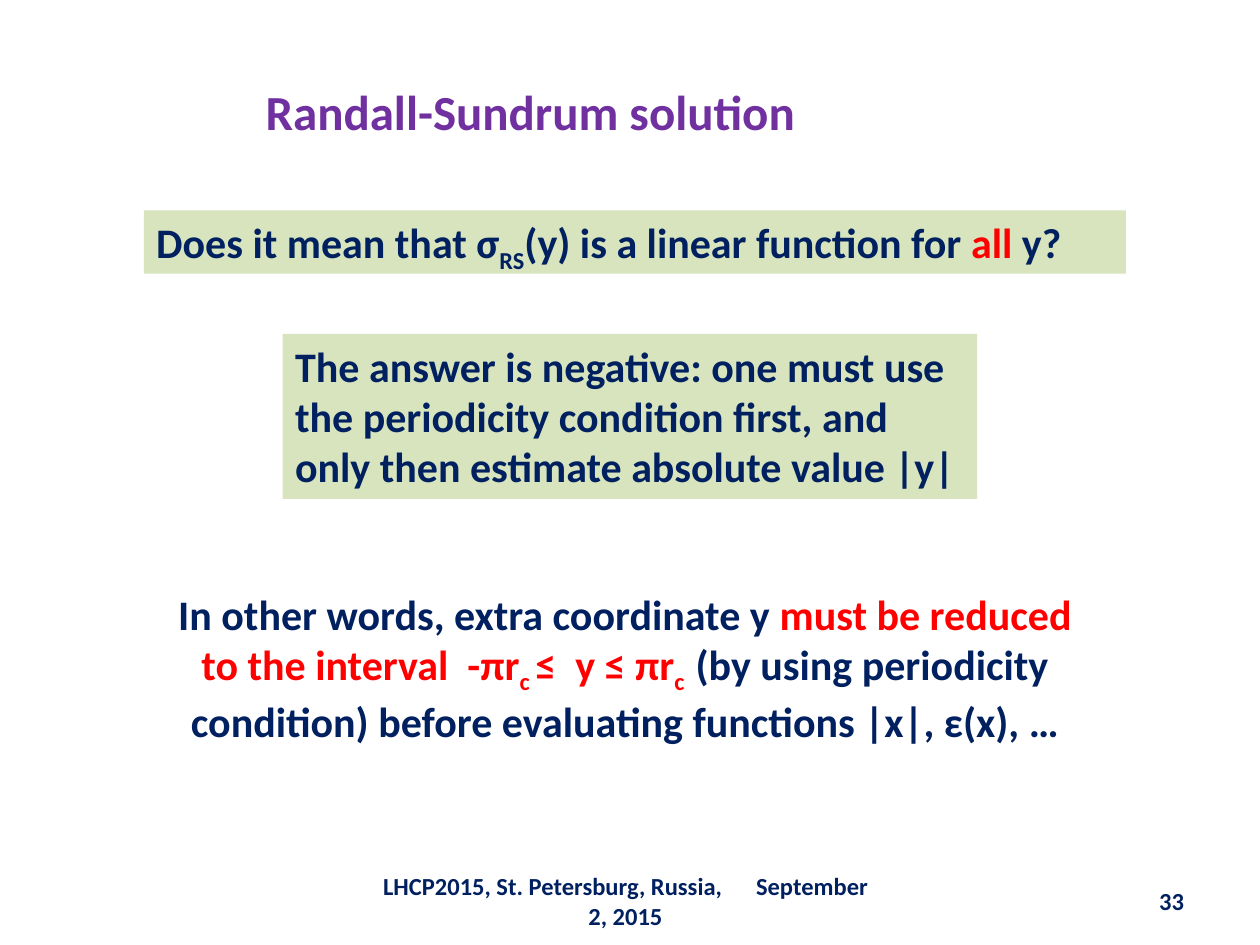
from pptx import Presentation
from pptx.dml.color import RGBColor
from pptx.enum.shapes import MSO_SHAPE
from pptx.enum.text import MSO_ANCHOR, MSO_AUTO_SIZE, PP_ALIGN
from pptx.util import Cm, Pt

RECT = MSO_SHAPE.RECTANGLE
LEFT, CENTER, RIGHT = PP_ALIGN.LEFT, PP_ALIGN.CENTER, PP_ALIGN.RIGHT
TOP, MIDDLE = MSO_ANCHOR.TOP, MSO_ANCHOR.MIDDLE
NO_FIT = MSO_AUTO_SIZE.NONE

NAVY, RED, PURPLE, GREEN = "002060", "FF0000", "7030A0", "D7E4BD"
SUB = {"baseline": "-25000"}
WIDE_SPACE = {"spc": "1600"}


def rgb(value):
    return RGBColor.from_string(value)


class SlideBuilder:
    font = {"name": "Calibri", "bold": True}

    def __init__(self, slide):
        self.s = slide

    def fill_text(self, sp, runs, size, align=LEFT, anchor=TOP, wrap=True):
        """Fill sp with runs given as (text, colour, extra run attributes)."""
        tf = sp.text_frame
        frame = {"word_wrap": wrap, "auto_size": NO_FIT, "vertical_anchor": anchor}
        for name, value in frame.items():
            setattr(tf, name, value)
        p = tf.paragraphs[0]
        p.alignment = align
        for text, color, extra in runs:
            r = p.add_run()
            r.text = text
            for name, value in {**self.font, "size": Pt(size)}.items():
                setattr(r.font, name, value)
            r.font.color.rgb = rgb(color)
            for name, value in extra.items():
                r._r.get_or_add_rPr().set(name, value)

    def title(self, box, text):
        sp = self.s.shapes.title
        sp.left, sp.top, sp.width, sp.height = map(Cm, box)
        self.fill_text(sp, [(text, PURPLE, {})], 28, wrap=False)

    def panel(self, box, runs):
        sp = self.s.shapes.add_shape(RECT, *map(Cm, box))
        sp.shadow.inherit = False
        sp.fill.solid()
        sp.fill.fore_color.rgb = rgb(GREEN)
        sp.line.fill.background()
        self.fill_text(sp, runs, 24)

    def text(self, box, runs, size, align, anchor=TOP):
        sp = self.s.shapes.add_textbox(*map(Cm, box))
        self.fill_text(sp, runs, size, align, anchor)


def main():
    prs = Presentation()
    prs.slide_width, prs.slide_height = Cm(25.4), Cm(19.05)
    b = SlideBuilder(prs.slides.add_slide(prs.slide_layouts[5]))

    b.title((5.1, 1.52, 11.3, 1.45), "Randall-Sundrum solution")
    b.panel((2.9, 4.24, 19.8, 1.28), [
        ("Does it mean that σ", NAVY, {}),
        ("RS", NAVY, SUB),
        ("(y) is a linear function for ", NAVY, {}),
        ("all", RED, {}),
        (" y?", NAVY, {}),
    ])
    b.panel((5.7, 6.73, 14, 3.33), [
        ("The answer is negative: one must use the periodicity condition "
         "first, and only then estimate absolute value |y|", NAVY, {}),
    ])
    b.text((2.9, 11.73, 19.4, 3.33), [
        ("In other words, extra coordinate y ", NAVY, {}),
        ("must be reduced to the interval  -πr", RED, {}),
        ("c ", RED, SUB),
        ("≤  y ≤ πr", RED, {}),
        ("c  ", RED, SUB),
        ("(by using periodicity condition) before evaluating functions "
         "|x|, ε(x), …", NAVY, {}),
    ], 24, CENTER)
    b.text((22.7, 17.65, 1.42, 1.02), [("33", NAVY, {})], 14, RIGHT, MIDDLE)
    b.text((7.3, 17.65, 10.62, 1.02), [
        ("LHCP2015, St. Petersburg, Russia,", NAVY, {}),
        (" ", NAVY, WIDE_SPACE),
        ("September 2, 2015", NAVY, {}),
    ], 14, CENTER, MIDDLE)

    prs.save("out.pptx")


if __name__ == "__main__":
    main()
